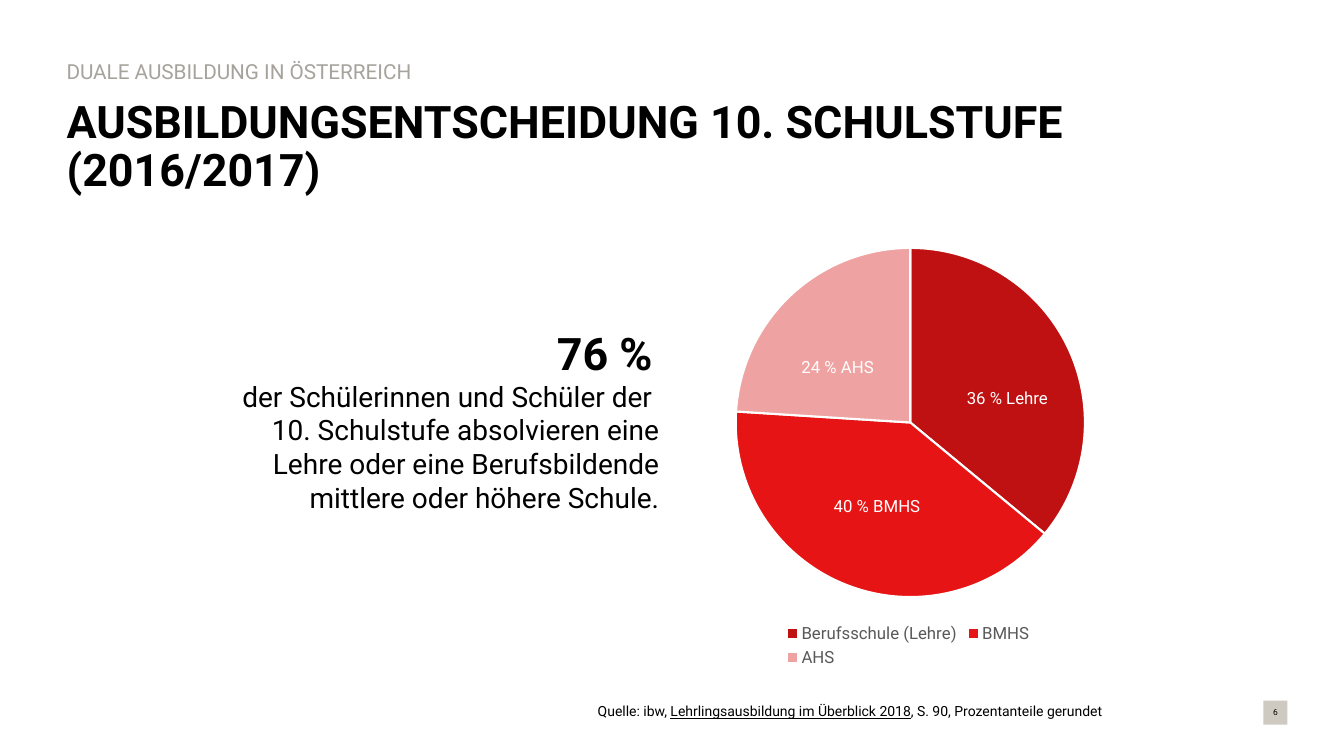
from pptx import Presentation
from pptx.chart.data import CategoryChartData
from pptx.dml.color import RGBColor
from pptx.enum.chart import XL_CHART_TYPE, XL_LEGEND_POSITION
from pptx.enum.shapes import MSO_SHAPE
from pptx.enum.text import MSO_ANCHOR, MSO_AUTO_SIZE, PP_ALIGN
from pptx.oxml import parse_xml
from pptx.oxml.ns import nsdecls
from pptx.util import Inches, Pt

PIE = XL_CHART_TYPE.PIE
BOTTOM = XL_LEGEND_POSITION.BOTTOM
RECTANGLE = MSO_SHAPE.RECTANGLE
TOP, MIDDLE = MSO_ANCHOR.TOP, MSO_ANCHOR.MIDDLE
LEFT, CENTER, RIGHT = PP_ALIGN.LEFT, PP_ALIGN.CENTER, PP_ALIGN.RIGHT
NO_AUTOFIT = MSO_AUTO_SIZE.NONE

FONT = "Roboto"
BLACK = RGBColor(0x00, 0x00, 0x00)
WHITE = RGBColor(0xFF, 0xFF, 0xFF)
GREY = RGBColor(0xA6, 0xA3, 0x9D)
LEGEND_GREY = RGBColor(0x59, 0x59, 0x59)
BEIGE = RGBColor(0xCE, 0xCA, 0xC2)
DARK_RED = RGBColor(0xBF, 0x11, 0x11)
RED = RGBColor(0xE6, 0x14, 0x14)
PINK = RGBColor(0xEF, 0xA2, 0xA2)

SHARES = [("Berufsschule (Lehre)", 36, DARK_RED), ("BMHS", 40, RED), ("AHS", 24, PINK)]
PIE_LABELS = [("40 % BMHS", 1.11, 2.54), ("24 % AHS", 0.79, 1.16), ("36 % Lehre", 2.43, 1.47)]


def style_font(font, size, color, bold=False, underline=False):
    """Apply the slide's typeface with the given size, colour and emphasis."""
    font.name = FONT
    font.size = Pt(size)
    font.color.rgb = color
    font.bold = bold
    font.underline = underline


def write_text(shape, runs, size=12, color=BLACK, align=LEFT, anchor=TOP, wrap=True,
               line_spacing=1.0, space_after=0):
    """Fill a shape with one paragraph made of (text, font options) runs."""
    frame = shape.text_frame
    frame.word_wrap = wrap
    frame.auto_size = NO_AUTOFIT
    frame.vertical_anchor = anchor
    paragraph = frame.paragraphs[0]
    paragraph.alignment = align
    paragraph.line_spacing = line_spacing
    paragraph.space_before = Pt(0)
    paragraph.space_after = Pt(space_after)
    for text, options in runs:
        for index, line in enumerate(text.split("\n")):
            if index:
                paragraph.add_line_break()
            if line:
                run = paragraph.add_run()
                run.text = line
                style_font(run.font, **{"size": size, "color": color, **options})


def add_text(slide, box, runs, **options):
    """Add a text box at the given box in inches."""
    shape = slide.shapes.add_textbox(*map(Inches, box))
    write_text(shape, runs, **options)


def add_heading(slide, left, top, width):
    """Place the topic line and the title below it."""
    topic_height = 0.33
    topic, title = slide.placeholders[1], slide.shapes.title
    topic.left, topic.top = Inches(left), Inches(top)
    topic.width, topic.height = Inches(width / 2), Inches(topic_height)
    title.left, title.top = Inches(left), Inches(top + topic_height)
    title.width, title.height = Inches(width), Inches(1.16)
    write_text(topic, [("DUALE AUSBILDUNG IN ÖSTERREICH", {})], size=14.8, color=GREY,
               anchor=MIDDLE, line_spacing=0.9)
    write_text(title, [("AUSBILDUNGSENTSCHEIDUNG 10. SCHULSTUFE (2016/2017)", {"bold": True})],
               size=32, anchor=MIDDLE, line_spacing=0.9)


def add_statement(slide, box):
    """Place the key figure with its explanation."""
    add_text(slide, box, [
        ("76 %", {"size": 32, "bold": True}),
        (" \nder Schülerinnen und Schüler der \n10. Schulstufe absolvieren eine Lehre "
         "oder eine Berufsbildende mittlere oder höhere Schule.", {}),
    ], size=20, align=RIGHT, space_after=6)


def add_share_chart(slide, left, top, width, height):
    """Place the pie chart with its legend and slice labels."""
    data = CategoryChartData()
    data.categories = [name for name, _, _ in SHARES]
    data.add_series("Series 1", [value for _, value, _ in SHARES])
    box = map(Inches, (left, top, width, height))
    chart = slide.shapes.add_chart(PIE, *box, data).chart
    style_font(chart.font, 10, BLACK)
    chart.has_title = False
    chart.has_legend = True
    chart.legend.position = BOTTOM
    chart.legend.include_in_layout = False
    style_font(chart.legend.font, 12, LEGEND_GREY)
    plot = chart.plots[0]
    plot.vary_by_categories = True
    for index, (_, _, color) in enumerate(SHARES):
        point_format = plot.series[0].points[index].format
        point_format.fill.solid()
        point_format.fill.fore_color.rgb = color
        point_format.line.color.rgb = WHITE
        point_format.line.width = Pt(1.5)
    set_plot_layout(chart, x=0.06, y=0.03, w=0.89, h=0.8)
    for text, offset_x, offset_y in PIE_LABELS:
        add_text(slide, (left + offset_x, top + offset_y, 1.09, 0.3), [(text, {})],
                 color=WHITE, wrap=False)


def set_plot_layout(chart, **fractions):
    """Fix the inner plot area as fractions of the chart."""
    plot_area = chart.plots[0]._element.getparent()
    for old_layout in plot_area.findall("{*}layout"):
        plot_area.remove(old_layout)
    values = "".join(f'<c:{key} val="{value}"/>' for key, value in fractions.items())
    plot_area.insert(0, parse_xml(
        f'<c:layout {nsdecls("c")}><c:manualLayout><c:layoutTarget val="inner"/>'
        f'<c:xMode val="edge"/><c:yMode val="edge"/>{values}</c:manualLayout></c:layout>'))


def add_source(slide, box):
    """Place the source line with its underlined publication."""
    add_text(slide, box, [
        ("Quelle: ibw, ", {}),
        ("Lehrlingsausbildung im Überblick 2018", {"underline": True}),
        (", S. 90, Prozentanteile gerundet", {}),
    ], size=10)


def add_page_number(slide, left, top, side):
    """Place the page number on its small square."""
    square = slide.shapes.add_shape(RECTANGLE, *map(Inches, (left, top, side, side)))
    square.shadow.inherit = False
    square.fill.solid()
    square.fill.fore_color.rgb = BEIGE
    square.line.fill.background()
    margin = 0.08
    text_side = side + 2 * margin
    add_text(slide, (left - margin, top - margin, text_side, text_side), [("6", {})],
             size=6, align=CENTER, anchor=MIDDLE)


def main():
    """Build and save the slide."""
    presentation = Presentation()
    presentation.slide_width = Inches(13.33)
    presentation.slide_height = Inches(7.5)
    slide = presentation.slides.add_slide(presentation.slide_layouts[2])
    add_heading(slide, 0.56, 0.56, 12.2)
    add_page_number(slide, 12.53, 6.95, 0.24)
    add_source(slide, (5.83, 6.92, 5.95, 0.27))
    add_statement(slide, (1.92, 3.18, 4.72, 2.63))
    add_share_chart(slide, 7.06, 2.33, 3.9, 4.33)
    presentation.save("out.pptx")


if __name__ == "__main__":
    main()
